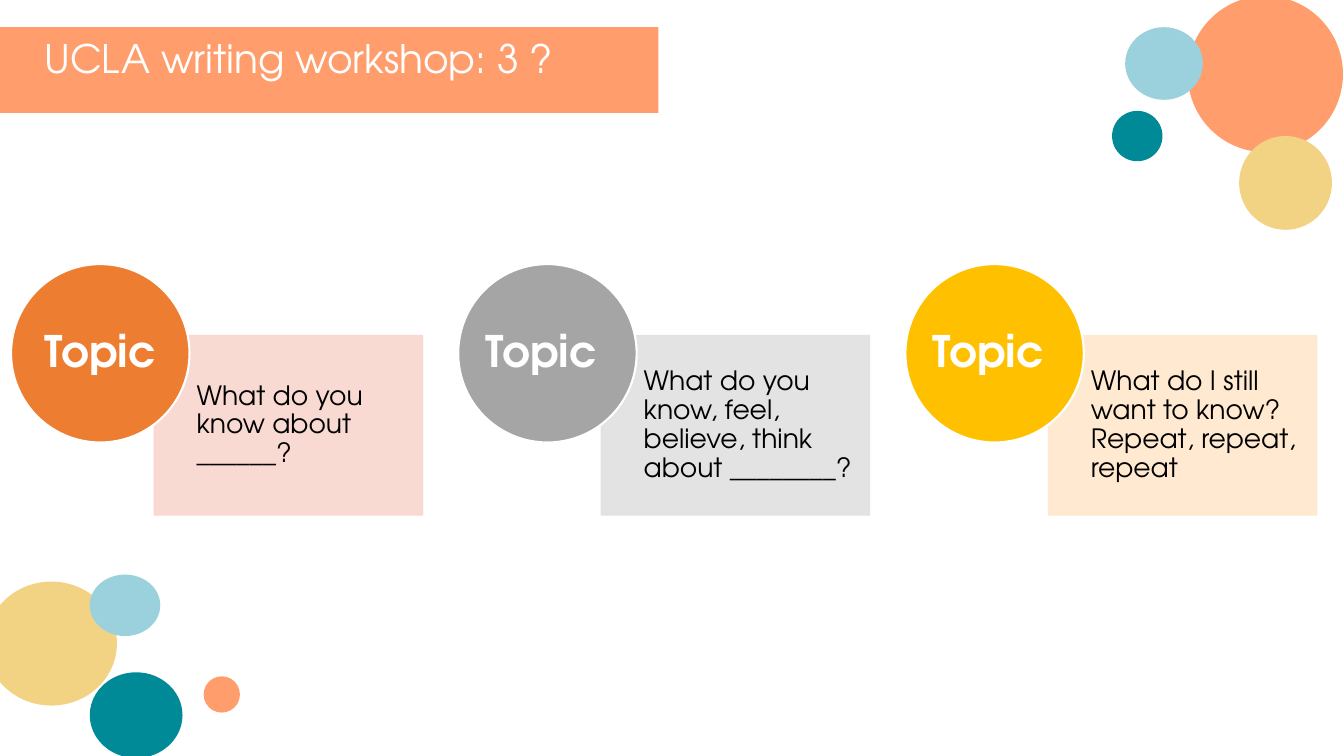
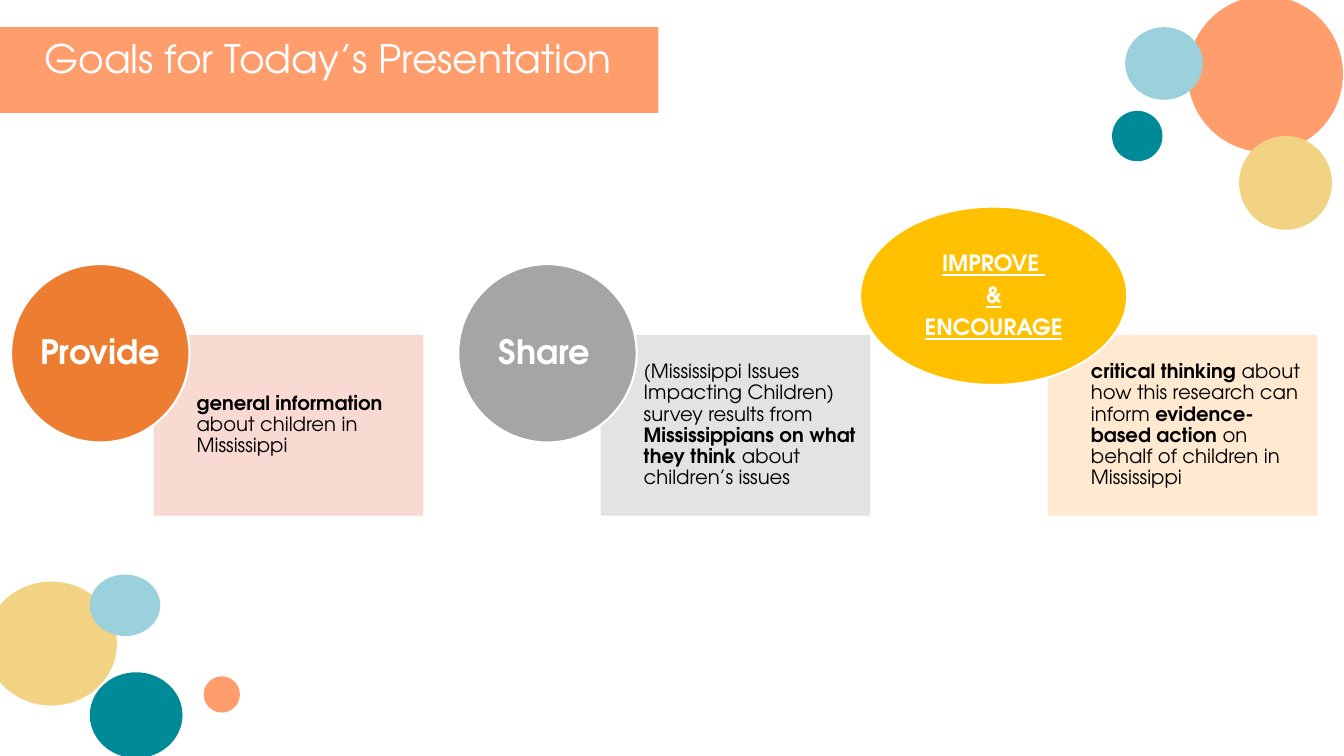
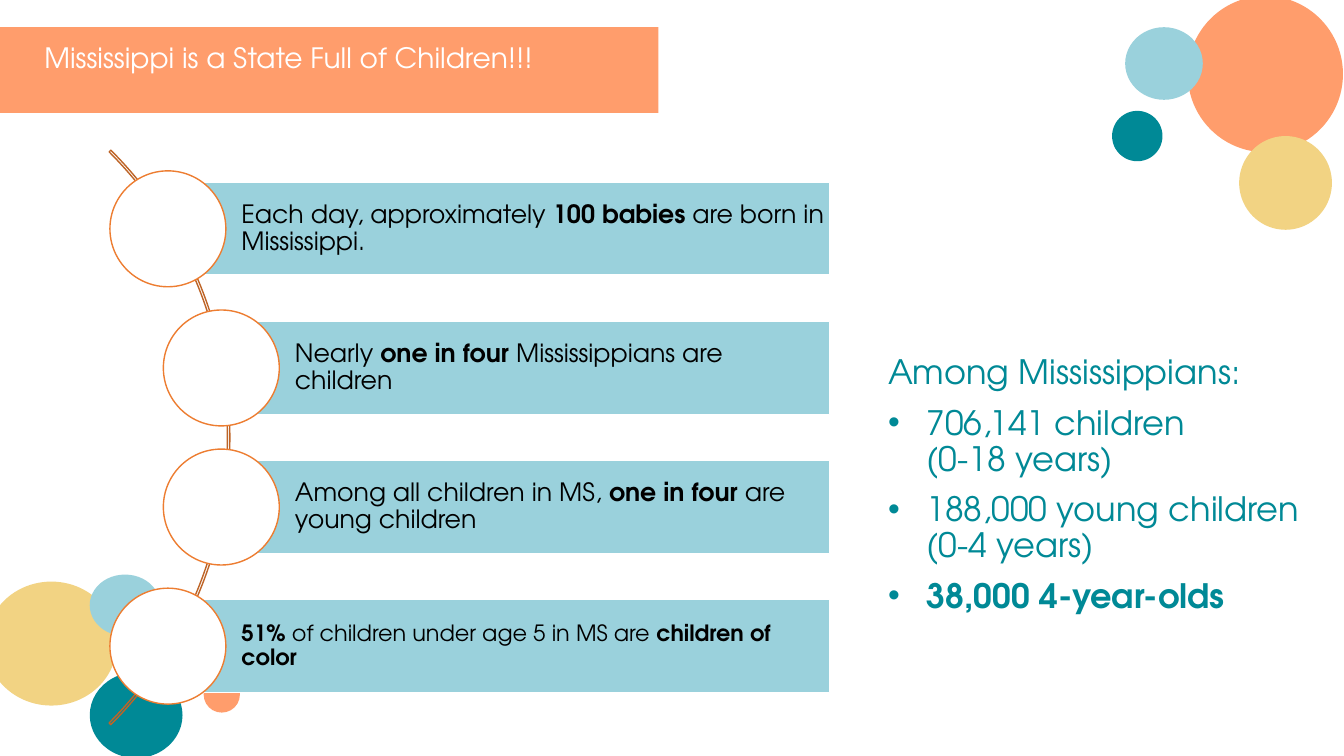
from lxml.etree import SubElement
from pptx import Presentation
from pptx.dml.color import RGBColor
from pptx.enum.shapes import MSO_SHAPE
from pptx.enum.text import MSO_ANCHOR, MSO_AUTO_SIZE, PP_ALIGN
from pptx.oxml.ns import qn
from pptx.util import Inches, Pt

FONT = "TeX Gyre Adventor"
COLORS = {
    "coral": "FF9D6C", "sand": "F2D383", "sky": "9AD1DC", "teal": "008996",
    "orange": "ED7D31", "gray": "A5A5A5", "gold": "FFC000", "rust": "BE6427",
    "pale orange": "F8D7CE", "pale gray": "E1E1E1", "pale gold": "FFE8CC",
    "white": "FFFFFF", "black": "000000",
}
BUBBLES = [
    ("coral", 11.78, -0.04, 1.54, 1.55), ("sand", -0.14, 5.77, 1.3, 1.23),
    ("sand", 12.29, 1.35, 0.92, 0.93), ("sky", 11.16, 0.27, 0.77, 0.72),
    ("sky", 0.89, 5.7, 0.7, 0.61), ("teal", 0.89, 6.67, 0.92, 0.85),
    ("coral", 2.02, 6.71, 0.36, 0.36), ("teal", 11.03, 1.1, 0.5, 0.5),
]
CARD_COLORS = [("orange", "pale orange"), ("gray", "pale gray"), ("gold", "pale gold")]
CARDS_LEFT, CARDS_RIGHT, CARDS_TOP = 0.11, 13.06, 2.62
CARD_WIDTH = 4.08
ROUND_BADGE = (0, 0, 1.77, 1.77)
WIDE_BADGE = (-0.45, -0.57, 2.65, 1.77)


def rgb(color):
    return RGBColor.from_string(COLORS[color])


def add_form(slide, preset, box, fill=None, line=None, line_width=1):
    form = slide.shapes.add_shape(preset, *[Inches(length) for length in box])
    form.shadow.inherit = False
    if fill:
        form.fill.solid()
        form.fill.fore_color.rgb = rgb(fill)
    else:
        form.fill.background()
    if line:
        form.line.color.rgb = rgb(line)
        form.line.width = Pt(line_width)
    else:
        form.line.fill.background()
    return form


def set_frame(frame, anchor, insets):
    frame.word_wrap = True
    frame.auto_size = MSO_AUTO_SIZE.NONE
    frame.vertical_anchor = anchor
    (frame.margin_left, frame.margin_top,
     frame.margin_right, frame.margin_bottom) = [Inches(inset) for inset in insets]


def format_run(run, size, color, bold=False, underline=False):
    run.font.name = FONT
    run.font.size = Pt(size)
    run.font.color.rgb = rgb(color)
    run.font.bold = bold
    run.font.underline = underline


def write_marked(paragraph, text, size, color, align=PP_ALIGN.LEFT,
                 plain_size=None, underline=False):
    """Write text in which ** switches bold on and off."""
    paragraph.alignment = align
    paragraph.line_spacing = 0.9
    for index, part in enumerate(text.split("**")):
        if part:
            bold = index % 2 == 1
            run = paragraph.add_run()
            run.text = part
            format_run(run, size if bold else plain_size or size, color, bold, underline)


def start_slide(deck, heading, size, top=0.34):
    slide = deck.slides.add_slide(deck.slide_layouts[5])
    for color, *box in BUBBLES:
        add_form(slide, MSO_SHAPE.FLOWCHART_CONNECTOR, box, color)
    add_form(slide, MSO_SHAPE.RECTANGLE, (0, 0.27, 6.53, 0.85), "coral")

    # Title, brought in front of its band
    title = slide.shapes.title
    slide.shapes.element.append(title.element)
    title.left, title.top = Inches(0.34), Inches(top)
    title.width, title.height = Inches(6.12), Inches(0.6)
    set_frame(title.text_frame, MSO_ANCHOR.TOP, (0.1, 0.05, 0.1, 0.05))
    title.text_frame.text = heading
    paragraph = title.text_frame.paragraphs[0]
    paragraph.alignment = PP_ALIGN.LEFT
    paragraph.line_spacing = 0.9
    format_run(paragraph.runs[0], size, "white")
    return slide


def add_card(slide, left, top, colors, labels, detail, label_size, detail_size,
             inset, badge, underline):
    badge_color, panel_color = colors

    # Panel with the detail
    panel = add_form(slide, MSO_SHAPE.RECTANGLE, (left + 1.42, top + 0.71, 2.66, 1.78),
                     panel_color, panel_color)
    for color in panel.element.spPr.iter(qn("a:srgbClr")):
        SubElement(color, qn("a:alpha"), val="90000")
    set_frame(panel.text_frame, MSO_ANCHOR.MIDDLE, (0.42, inset, inset, inset))
    write_marked(panel.text_frame.paragraphs[0], detail, detail_size, "black")

    # Badge with the label
    x, y, width, height = badge
    disc = add_form(slide, MSO_SHAPE.OVAL, (left + x, top + y, width, height),
                    badge_color, "white", 1.5)
    frame = disc.text_frame
    set_frame(frame, MSO_ANCHOR.MIDDLE, (0, 0, 0, 0))
    for index, label in enumerate(labels):
        paragraph = frame.add_paragraph() if index else frame.paragraphs[0]
        write_marked(paragraph, label, label_size, "white", PP_ALIGN.CENTER, 16, underline)
        paragraph.space_after = Pt(5.6)


def add_cards(slide, cards, detail_size, inset):
    pitch = (CARDS_RIGHT - CARDS_LEFT - CARD_WIDTH) / (len(cards) - 1)
    for index, (labels, label_size, detail) in enumerate(cards):
        stacked = len(labels) > 1
        add_card(slide, CARDS_LEFT + index * pitch, CARDS_TOP, CARD_COLORS[index], labels,
                 detail, label_size, detail_size, inset,
                 WIDE_BADGE if stacked else ROUND_BADGE, stacked)


def add_fact_list(slide, left, top, right, facts):
    # Arc that the discs sit on
    arc = add_form(slide, MSO_SHAPE.BLOCK_ARC, (left - 6.87, top - 1.5, 8.06, 8.06),
                   line="rust")
    for index, value in enumerate((189, 27, 0.003)):
        arc.adjustments[index] = value

    # Bars, each with a disc centred on its left end
    height, pitch, disc = 0.92, 1.38, 1.15
    for index, (indent, size, fact) in enumerate(facts):
        x, y = left + disc / 2 + indent, top + index * pitch
        bar = add_form(slide, MSO_SHAPE.RECTANGLE, (x, y, right - x, height), "sky", "white")
        set_frame(bar.text_frame, MSO_ANCHOR.MIDDLE, (0.73, 0.05, 0.05, 0.05))
        write_marked(bar.text_frame.paragraphs[0], fact, size, "black")
        add_form(slide, MSO_SHAPE.OVAL, (x - disc / 2, y + (height - disc) / 2, disc, disc),
                 "white", "orange")


def add_counts(slide, box, lead, counts):
    frame = slide.shapes.add_textbox(*[Inches(length) for length in box]).text_frame
    set_frame(frame, MSO_ANCHOR.TOP, (0.1, 0.05, 0.1, 0.05))
    for index, line in enumerate([lead, *counts]):
        paragraph = frame.add_paragraph() if index else frame.paragraphs[0]
        paragraph.text = line
        paragraph.line_spacing = 0.9
        if index:
            paragraph.space_before = Pt(10)
            properties = paragraph._p.get_or_add_pPr()
            properties.set("marL", str(Inches(0.38)))
            properties.set("indent", str(Inches(-0.38)))
            SubElement(properties, qn("a:buFont"), typeface="Arial")
            SubElement(properties, qn("a:buChar"), char="•")
        for run in paragraph.runs:
            format_run(run, 24, "teal", bold=index == len(counts))


def main():
    deck = Presentation()
    deck.slide_width, deck.slide_height = Inches(13.33), Inches(7.5)

    # Workshop questions
    workshop = start_slide(deck, "UCLA writing workshop: 3 ?", 28)
    add_cards(workshop, [
        (["**Topic**"], 31, "What do you know about ______?"),
        (["**Topic **"], 31, "What do you know, feel, believe, think about ________?"),
        (["**Topic **"], 31, "What do I still want to know? Repeat, repeat, repeat"),
    ], detail_size=19, inset=0.15)

    # Goals
    goals = start_slide(deck, "Goals for Today’s Presentation", 28)
    add_cards(goals, [
        (["**Provide** "], 24, "**general information **about children in Mississippi"),
        (["**Share** "], 24, "(Mississippi Issues Impacting Children) survey results from "
         "**Mississippians on what they think **about children’s issues"),
        (["**IMPROVE **", "**&**", "**ENCOURAGE**"], 16,
         "**critical thinking **about how this research can inform "
         "**evidence- based action **on behalf of children in Mississippi"),
    ], detail_size=14, inset=0.11)

    # Facts about children
    children = start_slide(deck, "Mississippi is a State Full of Children!!!", 20, top=0.39)
    add_counts(children, (8.71, 3.48, 4.38, 2.98), "Among Mississippians:", [
        "706,141 children \v(0-18 years)",
        "188,000 young children \v(0-4 years)",
        "38,000 4-year-olds",
    ])
    add_fact_list(children, 1.09, 1.81, 8.23, [
        (0, 18, "Each day, approximately **100 babies **are born in Mississippi."),
        (0.53, 18, "Nearly **one in four **Mississippians are children"),
        (0.53, 18, "Among all children in MS, **one in four **are young children"),
        (0, 16, "**51%** of children under age 5 in MS are **children of color**"),
    ])
    deck.save("out.pptx")


if __name__ == "__main__":
    main()
